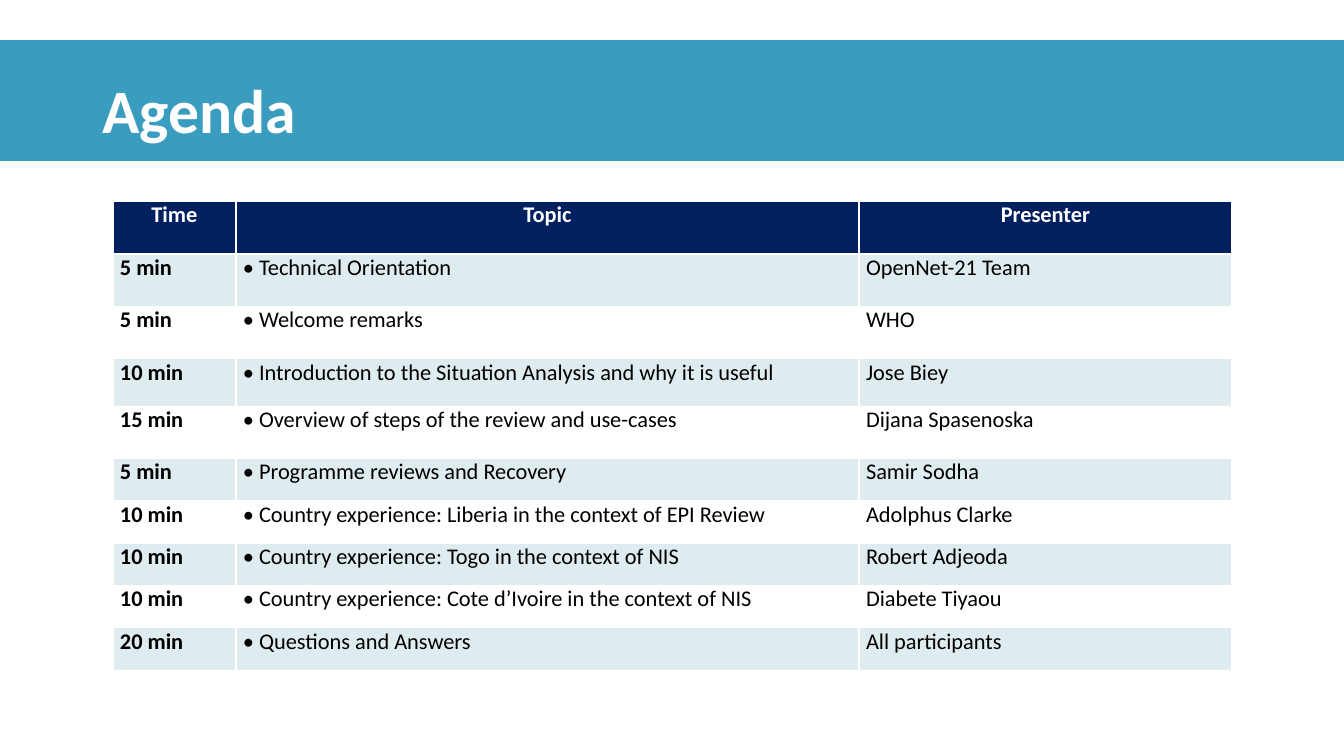
from dataclasses import dataclass

from lxml import etree
from pptx import Presentation
from pptx.dml.color import RGBColor
from pptx.enum.shapes import MSO_SHAPE
from pptx.enum.text import MSO_ANCHOR, PP_ALIGN
from pptx.oxml.ns import qn
from pptx.util import Inches, Pt

RECTANGLE = MSO_SHAPE.RECTANGLE
MIDDLE, TOP = MSO_ANCHOR.MIDDLE, MSO_ANCHOR.TOP
LEFT, CENTER = PP_ALIGN.LEFT, PP_ALIGN.CENTER


@dataclass(frozen=True)
class Theme:
    font: str = "Calibri"
    title_size: int = 44
    table_size: int = 16
    band: str = "3A9DBF"
    header: str = "002060"
    stripe: str = "DEECEF"
    white: str = "FFFFFF"
    black: str = "000000"


THEME = Theme()
COLUMN_WIDTHS = (1.22, 6.18, 3.7)
ROW_HEIGHTS = (0.52, 0.52, 0.52, 0.47, 0.52, 0.42, 0.42, 0.42, 0.42, 0.43)
HEADINGS = ("Time", "Topic", "Presenter")
SESSIONS = (
    ("5 min", "Technical Orientation", "OpenNet-21 Team"),
    ("5 min", "Welcome remarks", "WHO"),
    ("10 min", "Introduction to the Situation Analysis and why it is useful", "Jose Biey"),
    ("15 min", "Overview of steps of the review and use-cases", "Dijana Spasenoska"),
    ("5 min", "Programme reviews and Recovery", "Samir Sodha"),
    ("10 min", "Country experience: Liberia in the context of EPI Review", "Adolphus Clarke"),
    ("10 min", "Country experience: Togo in the context of NIS", "Robert Adjeoda"),
    ("10 min", "Country experience: Cote d’Ivoire in the context of NIS", "Diabete Tiyaou"),
    ("20 min", "Questions and Answers", "All participants"),
)


def add_bullet(para, indent=0.16):
    properties = para._p.get_or_add_pPr()
    properties.set("marL", str(Inches(indent)))
    properties.set("indent", str(-Inches(indent)))
    etree.SubElement(properties, qn("a:buFont"), typeface=THEME.font)
    etree.SubElement(properties, qn("a:buChar"), char="•")


def write(frame, text, *, size, color, bold=False, align=LEFT, bullet=False, spacing=None):
    frame.word_wrap = True
    para = frame.paragraphs[0]
    para.alignment = align
    if spacing:
        para.line_spacing = spacing
    if bullet:
        add_bullet(para)
    span = para.add_run()
    span.text = text
    span.font.name = THEME.font
    span.font.size = Pt(size)
    span.font.bold = bold
    span.font.color.rgb = RGBColor.from_string(color)


def set_cell_borders(cell, color, width=1):
    properties = cell._tc.get_or_add_tcPr()
    for position, side in enumerate(("a:lnL", "a:lnR", "a:lnT", "a:lnB")):
        line = etree.Element(qn(side), w=str(Pt(width)))
        fill = etree.SubElement(line, qn("a:solidFill"))
        etree.SubElement(fill, qn("a:srgbClr"), val=color)
        properties.insert(position, line)


def fill_cell(cell, text, fill, **text_format):
    cell.margin_left = cell.margin_right = Inches(0.07)
    cell.margin_top = cell.margin_bottom = 0
    cell.vertical_anchor = TOP
    cell.fill.solid()
    cell.fill.fore_color.rgb = RGBColor.from_string(fill)
    set_cell_borders(cell, THEME.white)
    write(cell.text_frame, text, size=THEME.table_size, **text_format)


def add_title_band(page, text, left, top, width, height):
    band = page.shapes.add_shape(RECTANGLE, Inches(left), Inches(top), Inches(width), Inches(height))
    band.shadow.inherit = False
    band.fill.solid()
    band.fill.fore_color.rgb = RGBColor.from_string(THEME.band)
    band.line.color.rgb = RGBColor.from_string(THEME.band)
    band.line.width = Pt(1)
    box = page.shapes.add_textbox(Inches(left + 0.92), Inches(top), Inches(11.5), Inches(1.45))
    box.text_frame.vertical_anchor = MIDDLE
    write(box.text_frame, text, size=THEME.title_size, color=THEME.white, bold=True, spacing=0.9)


def add_agenda_table(page, left, top):
    frame = page.shapes.add_table(
        len(ROW_HEIGHTS), len(COLUMN_WIDTHS), Inches(left), Inches(top),
        Inches(sum(COLUMN_WIDTHS)), Inches(sum(ROW_HEIGHTS)))
    table = frame.table
    table.horz_banding = False
    for column, width in zip(table.columns, COLUMN_WIDTHS):
        column.width = Inches(width)
    for row, height in zip(table.rows, ROW_HEIGHTS):
        row.height = Inches(height)
    for column, heading in enumerate(HEADINGS):
        fill_cell(table.cell(0, column), heading, THEME.header,
                  color=THEME.white, bold=True, align=CENTER)
    for row, session in enumerate(SESSIONS, start=1):
        fill = THEME.stripe if row % 2 else THEME.white
        for column, text in enumerate(session):
            fill_cell(table.cell(row, column), text, fill, color=THEME.black,
                      bold=column == 0, bullet=column == 1)


def main():
    deck = Presentation()
    deck.slide_width, deck.slide_height = Inches(13.33), Inches(7.5)
    page = deck.slides.add_slide(deck.slide_layouts[6])
    add_title_band(page, "Agenda", 0, 0.4, 13.33, 1.19)
    add_agenda_table(page, 1.12, 2)
    deck.save("out.pptx")


if __name__ == "__main__":
    main()
